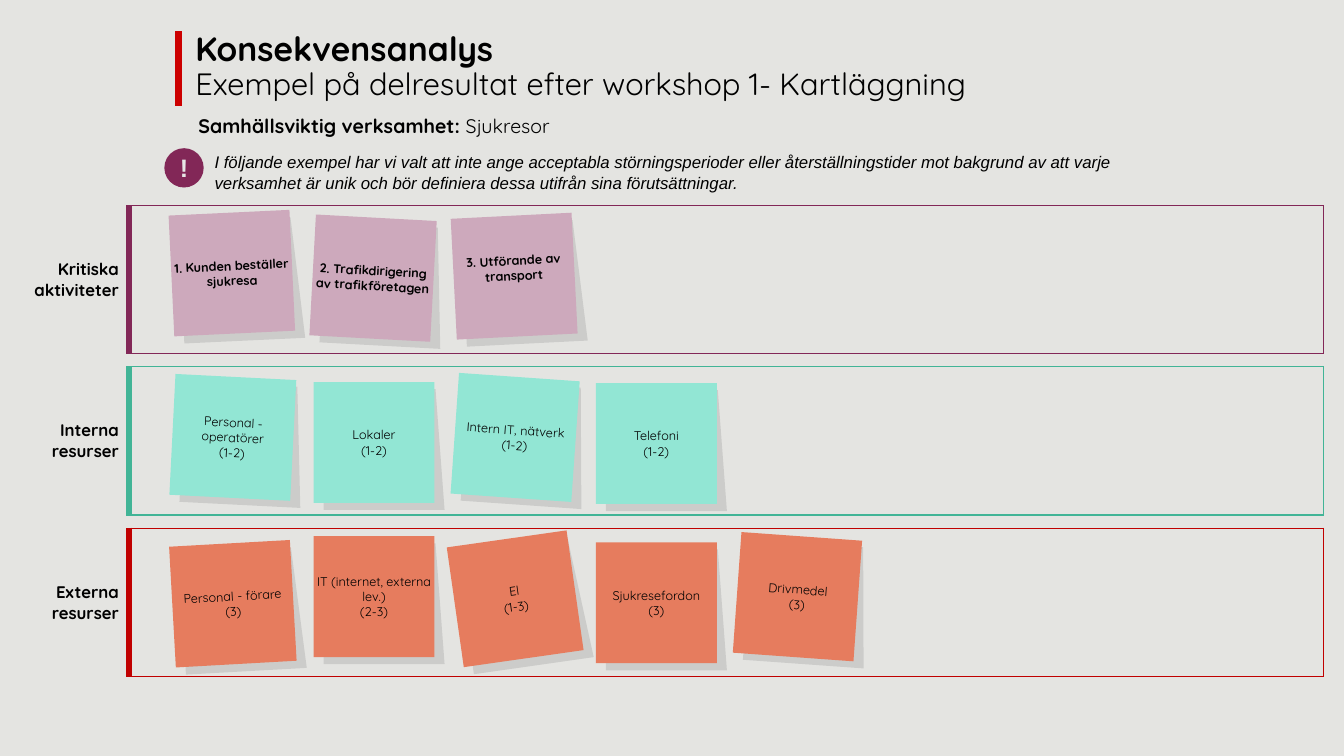
from dataclasses import dataclass

from lxml import etree
from pptx import Presentation
from pptx import util as u
from pptx.dml.color import RGBColor
from pptx.enum import shapes, text
from pptx.oxml import ns


@dataclass(frozen=True)
class Theme:
    page: str = "E4E4E1"
    ink: str = "000000"
    pale: str = "E7E6E6"
    bar: str = "CC0000"
    plum: str = "822757"
    teal: str = "41B496"
    red: str = "C00000"
    plum_note: str = "CDA9BC"
    teal_note: str = "92E6D4"
    red_note: str = "E67C5E"
    font: str = "Quicksand"
    plain_font: str = "Arial"
    title: int = 24
    subtitle: int = 22
    heading: int = 14
    body: int = 12
    note: int = 9
    badge: int = 18


NOTE_SIDE = 1.2
ROW_HEIGHT, GAP_HEIGHT = 1.47, 0.13


class WorkshopSlide:
    """Draws the workshop board on one slide with a shared theme."""

    def __init__(self, prs, theme):
        self.theme = theme
        self.s = prs.slides.add_slide(prs.slide_layouts[6])
        fill = self.s.background.fill
        fill.solid()
        fill.fore_color.rgb = RGBColor.from_string(theme.page)

    def style(self, r, size, bold=False, italic=False, font=None, color=None):
        r.font.name = font or self.theme.font
        r.font.size = u.Pt(size)
        r.font.bold, r.font.italic = bold, italic
        r.font.color.rgb = RGBColor.from_string(color or self.theme.ink)

    def paint(self, sp, color):
        sp.shadow.inherit = False
        sp.fill.solid()
        sp.fill.fore_color.rgb = RGBColor.from_string(color)
        sp.line.fill.background()

    def centre(self, sp, words, **font):
        tf = sp.text_frame
        tf.word_wrap = True
        tf.vertical_anchor = text.MSO_ANCHOR.MIDDLE
        tf.margin_left = tf.margin_right = tf.margin_top = tf.margin_bottom = 0
        tf.text = words
        for p in tf.paragraphs:
            p.alignment = text.PP_ALIGN.CENTER
            for r in p.runs:
                self.style(r, **font)
        return tf

    def textbox(self, x, y, w, h, words):
        tf = self.s.shapes.add_textbox(*map(u.Inches, (x, y, w, h))).text_frame
        tf.word_wrap = True
        tf.text = words
        return tf

    def title(self, x, y, w, h, title, subtitle):
        tf = self.textbox(x, y, w, h, f"{title}\n{subtitle}")
        sizes = (self.theme.title, True), (self.theme.subtitle, False)
        for p, (size, bold) in zip(tf.paragraphs, sizes):
            p.line_spacing = 0.9
            self.style(p.runs[0], size, bold)

    def labelled(self, x, y, w, h, label, value):
        p = self.textbox(x, y, w, h, label).paragraphs[0]
        self.style(p.runs[0], self.theme.heading, bold=True)
        r = p.add_run()
        r.text = value
        self.style(r, self.theme.heading)

    def remark(self, x, y, w, h, words):
        p = self.textbox(x, y, w, h, words).paragraphs[0]
        self.style(p.runs[0], self.theme.body, italic=True, font=self.theme.plain_font)

    def bar(self, x, top, bottom):
        line = self.s.shapes.add_connector(
            shapes.MSO_CONNECTOR.STRAIGHT, *map(u.Inches, (x, top, x, bottom)))
        line.line.color.rgb = RGBColor.from_string(self.theme.bar)
        line.line.width = u.Pt(5)
        etree.SubElement(line._element.spPr, ns.qn("a:effectLst"))

    def badge(self, x, y, side, mark):
        sp = self.s.shapes.add_shape(
            shapes.MSO_SHAPE.OVAL, *map(u.Inches, (x, y, side, side)))
        self.paint(sp, self.theme.plum)
        self.centre(sp, mark, size=self.theme.badge, bold=True,
                    font=self.theme.plain_font, color=self.theme.pale)

    def note(self, x, y, angle, words, color, bold=False, lift=0):
        group = self.s.shapes.add_group_shape()
        left, top = x + 0.1, y + 0.07
        right, bottom = left + NOTE_SIDE, top + NOTE_SIDE
        corners = [(right - 0.09, top), (right, bottom), (left, bottom)]
        outline = group.shapes.build_freeform(u.Inches(left), u.Inches(top))
        outline.add_line_segments([(u.Inches(a), u.Inches(b)) for a, b in corners])
        shade = outline.convert_to_shape()
        self.paint(shade, self.theme.ink)
        tint = shade._element.spPr.find(".//" + ns.qn("a:srgbClr"))
        etree.SubElement(tint, ns.qn("a:alpha"), val="10000")
        sp = group.shapes.add_shape(
            shapes.MSO_SHAPE.RECTANGLE,
            *map(u.Inches, (x, y, NOTE_SIDE, NOTE_SIDE)))
        self.paint(sp, color)
        shade.rotation = sp.rotation = angle
        tf = self.centre(sp, words, size=self.theme.note, bold=bold)
        tf.margin_bottom = u.Inches(lift)

    def cell(self, cell, borders, words=""):
        tcPr = cell._tc.get_or_add_tcPr()
        for side in "LRTB":
            if side in borders:
                color, width = borders[side]
                ln = etree.SubElement(tcPr, ns.qn(f"a:ln{side}"), w=str(u.Pt(width)))
                fill = etree.SubElement(ln, ns.qn("a:solidFill"))
                etree.SubElement(fill, ns.qn("a:srgbClr"), val=color)
        cell.fill.background()
        cell.vertical_anchor = text.MSO_ANCHOR.MIDDLE
        if not words:
            cell.margin_top = cell.margin_bottom = 0
            end = etree.SubElement(cell.text_frame.paragraphs[0]._p, ns.qn("a:endParaRPr"))
            end.set("sz", "100")
            return
        cell.text_frame.text = words
        for p in cell.text_frame.paragraphs:
            p.alignment = text.PP_ALIGN.RIGHT
            self.style(p.runs[0], self.theme.body, bold=True)

    def lanes(self, x, y, widths, lanes):
        count = 2 * len(lanes) - 1
        height = len(lanes) * ROW_HEIGHT + (len(lanes) - 1) * GAP_HEIGHT
        table = self.s.shapes.add_table(
            count, 2, *map(u.Inches, (x, y, sum(widths), height))).table
        table.first_row = table.horz_banding = False
        style_id = table._tbl.tblPr.find(ns.qn("a:tableStyleId"))
        style_id.text = "{2D5ABB26-0587-4C30-8999-92F81FD0307C}"
        for column, width in zip(table.columns, widths):
            column.width = u.Inches(width)
        for i, row in enumerate(table.rows):
            label, color = lanes[i // 2]
            thick, thin = (color, 4.5), (color, 1)
            if i % 2:
                row.height = u.Inches(GAP_HEIGHT)
                self.cell(table.cell(i, 0), {})
                self.cell(table.cell(i, 1), {"T": thin, "B": (lanes[i // 2 + 1][1], 1)})
            else:
                row.height = u.Inches(ROW_HEIGHT)
                self.cell(table.cell(i, 0), {"R": thick}, label)
                self.cell(table.cell(i, 1), {"L": thick, "R": thin, "T": thin, "B": thin})


def main():
    theme = Theme()
    prs = Presentation()
    prs.slide_width, prs.slide_height = u.Inches(13.33), u.Inches(7.5)
    board = WorkshopSlide(prs, theme)

    board.lanes(0.17, 2.04, (1.11, 11.85), [
        ("Kritiska\naktiviteter", theme.plum),
        ("Interna\nresurser", theme.teal),
        ("Externa resurser", theme.red),
    ])
    board.note(1.7, 2.11, -2.7, "1. Kunden beställer sjukresa", theme.plum_note, bold=True)
    board.note(3.1, 2.16, 3.1, "2. Trafikdirigering av trafikföretagen", theme.plum_note, bold=True)
    board.note(4.5, 2.14, -2.9, "3. Utförande av transport", theme.plum_note, bold=True, lift=0.16)
    resources = [
        (theme.teal_note, [(3.74, 2.9, "Personal - operatörer\v(1-2)"),
                           (3.79, 0, "Lokaler\v(1-2)"),
                           (3.74, 4, "Intern IT, nätverk\v(1-2)"),
                           (3.8, 0, "Telefoni\n(1-2)")]),
        (theme.red_note, [(5.39, -3.2, "Personal - förare\n(3)"),
                          (5.32, 0, "IT (internet, externa lev.)\v(2-3)"),
                          (5.34, -8.1, "El\v(1-3)"),
                          (5.38, 0, "Sjukresefordon\n(3)"),
                          (5.32, 4.1, "Drivmedel\n(3)")]),
    ]
    for color, notes in resources:
        for i, (y, angle, words) in enumerate(notes):
            board.note(1.71 + 1.4 * i, y, angle, words, color)

    board.title(1.84, 0.27, 11.2, 0.47, "Konsekvensanalys",
                "Exempel på delresultat efter workshop 1- Kartläggning")
    board.bar(1.77, 0.31, 1.05)
    board.labelled(1.87, 1.08, 11.26, 0.34, "Samhällsviktig verksamhet: ", "Sjukresor")
    board.remark(2.03, 1.46, 9.1, 0.5,
                 "I följande exempel har vi valt att inte ange acceptabla störningsperioder "
                 "eller återställningstider mot bakgrund av att varje verksamhet är unik och "
                 "bör definiera dessa utifrån sina förutsättningar.")
    board.badge(1.63, 1.47, 0.39, "!")
    prs.save("out.pptx")


if __name__ == "__main__":
    main()
